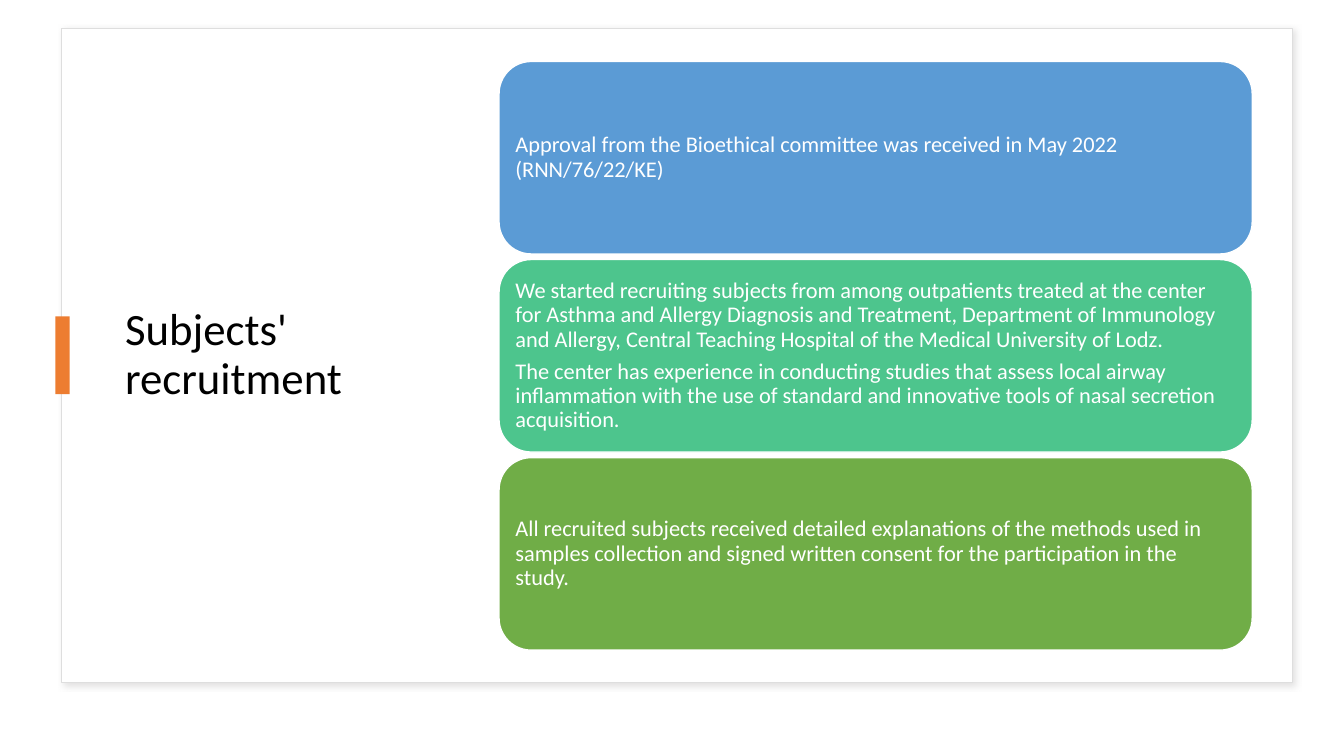
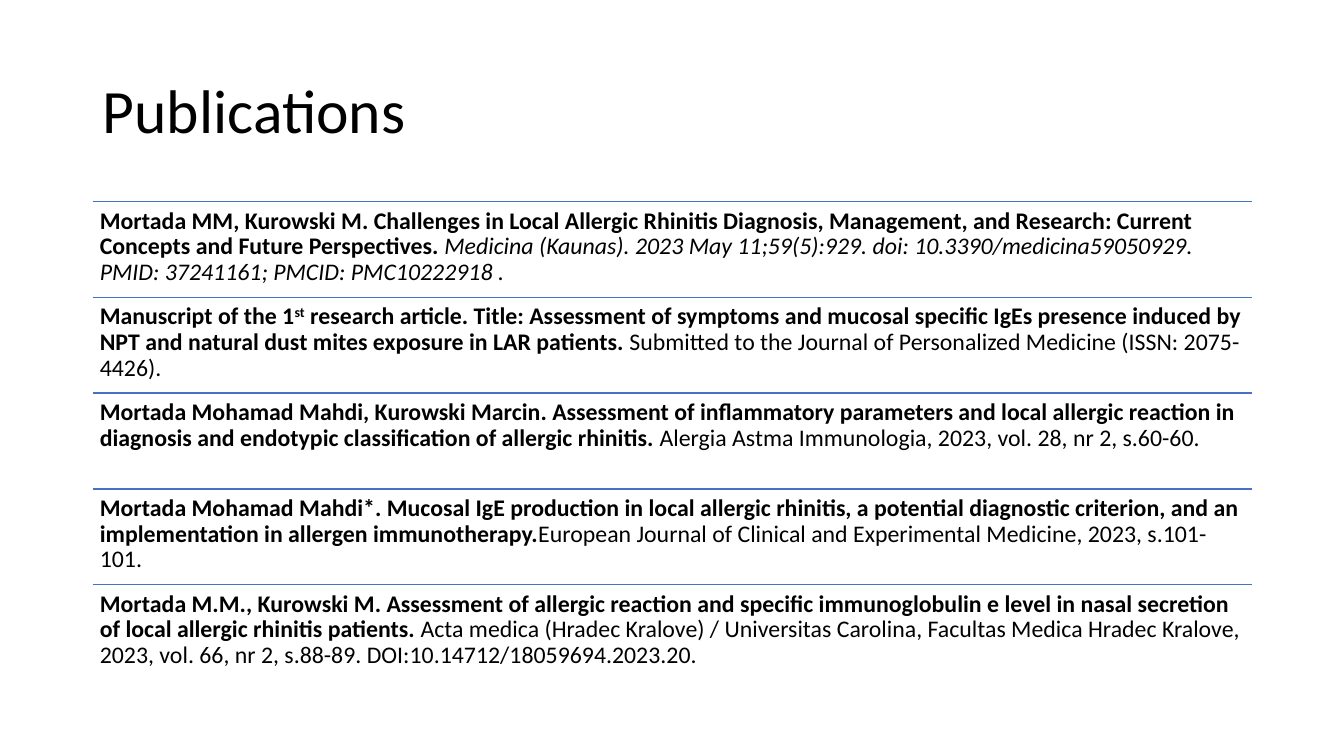
from lxml.etree import SubElement
from pptx import Presentation
from pptx.dml.color import RGBColor
from pptx.enum.shapes import MSO_CONNECTOR, MSO_SHAPE
from pptx.enum.text import MSO_ANCHOR, MSO_AUTO_SIZE, PP_ALIGN
from pptx.oxml.ns import qn
from pptx.util import Inches, Pt

# Shared style
FONT = "Calibri"
BLACK = RGBColor(0x00, 0x00, 0x00)
WHITE = RGBColor(0xFF, 0xFF, 0xFF)
FRAME_GRAY = RGBColor(0xDE, 0xDE, 0xDE)
SHADOW_GRAY = RGBColor(0xC5, 0xC3, 0xC3)
ORANGE = RGBColor(0xED, 0x7D, 0x31)
BLUE = RGBColor(0x5B, 0x9B, 0xD5)
TEAL = RGBColor(0x4D, 0xC5, 0x8D)
GREEN = RGBColor(0x70, 0xAD, 0x47)
RULE_BLUE = RGBColor(0x44, 0x72, 0xC4)
INSET = 0.07
LINE_SPACING = 0.9
PARAGRAPH_GAP = 0.35  # share of the text size

# Content
RECRUITMENT = [
    (BLUE, ["Approval from the Bioethical committee was received in May 2022 (RNN/76/22/KE)"]),
    (TEAL, [
        "We started recruiting subjects from among outpatients treated at the center for Asthma "
        "and Allergy Diagnosis and Treatment, Department of Immunology and Allergy, Central "
        "Teaching Hospital of the Medical University of Lodz.",
        "The center has experience in conducting studies that assess local airway inflammation "
        "with the use of standard and innovative tools of nasal secretion acquisition.",
    ]),
    (GREEN, [
        "All recruited subjects received detailed explanations of the methods used in samples "
        "collection and signed written consent for the participation in the study.",
    ]),
]

# Each publication is a list of (text, style) runs
PUBLICATIONS = [
    [("Mortada MM, Kurowski M. Challenges in Local Allergic Rhinitis Diagnosis, Management, "
      "and Research: Current Concepts and Future Perspectives. ", "bold"),
     ("Medicina (Kaunas). 2023 May 11;59(5):929. doi: 10.3390/medicina59050929. "
      "PMID: 37241161; PMCID: PMC10222918 .", "italic")],
    [("Manuscript of the 1", "bold"),
     ("st", "bold superscript"),
     (" research article. Title: Assessment of symptoms and mucosal specific IgEs presence "
      "induced by NPT and natural dust mites exposure in LAR patients. ", "bold"),
     ("Submitted to the Journal of Personalized Medicine (ISSN: 2075-4426).", "")],
    [("Mortada Mohamad Mahdi, Kurowski Marcin. Assessment of inflammatory parameters and local "
      "allergic reaction in diagnosis and endotypic classification of allergic rhinitis. ", "bold"),
     ("Alergia Astma Immunologia, 2023, vol. 28, nr 2, s.60-60.", "")],
    [("Mortada Mohamad Mahdi*. Mucosal IgE production in local allergic rhinitis, a potential "
      "diagnostic criterion, and an implementation in allergen immunotherapy.", "bold"),
     ("European Journal of Clinical and Experimental Medicine, 2023, s.101-101.", "")],
    [("Mortada M.M., Kurowski M. Assessment of allergic reaction and specific immunoglobulin e "
      "level in nasal secretion of local allergic rhinitis patients. ", "bold"),
     ("Acta medica (Hradec Kralove) / Universitas Carolina, Facultas Medica Hradec Kralove, "
      "2023, vol. 66, nr 2, s.88-89. DOI:10.14712/18059694.2023.20.", "")],
]


def format_run(r, size, color, style=""):
    r.font.name = FONT
    r.font.size = Pt(size)
    r.font.color.rgb = color
    r.font.bold = "bold" in style
    r.font.italic = "italic" in style
    if "superscript" in style:
        r.font._element.set("baseline", "30000")


def format_paragraph(p, size, gap=PARAGRAPH_GAP):
    p.alignment = PP_ALIGN.LEFT
    p.line_spacing = LINE_SPACING
    p.space_before = Pt(0)
    p.space_after = Pt(round(size * gap, 1))


def format_frame(tf, anchor, inset):
    tf.word_wrap = True
    tf.auto_size = MSO_AUTO_SIZE.NONE
    tf.vertical_anchor = anchor
    tf.margin_left = tf.margin_right = tf.margin_top = tf.margin_bottom = Inches(inset)


def add_titled_slide(prs, title, box, size):
    s = prs.slides.add_slide(prs.slide_layouts[5])
    sp = s.shapes.title
    sp.left, sp.top, sp.width, sp.height = map(Inches, box)
    tf = sp.text_frame
    tf.text = title
    format_frame(tf, MSO_ANCHOR.MIDDLE, 0.1)
    format_paragraph(tf.paragraphs[0], size, gap=0)
    format_run(tf.paragraphs[0].runs[0], size, BLACK)
    return s


def add_box(s, kind, box, fill, line=None):
    sp = s.shapes.add_shape(kind, *map(Inches, box))
    sp.shadow.inherit = False
    sp.fill.solid()
    sp.fill.fore_color.rgb = fill
    if line is None:
        sp.line.fill.background()
    else:
        sp.line.color.rgb = line
        sp.line.width = Pt(1)
    return sp


def add_soft_shadow(sp):
    effects = sp._element.spPr.find(qn("a:effectLst"))
    shadow = SubElement(effects, qn("a:outerShdw"), blurRad=str(Pt(4)), dist=str(Pt(3)),
                        dir="2700000", algn="tl", rotWithShape="0")
    color = SubElement(shadow, qn("a:srgbClr"), val=str(SHADOW_GRAY))
    SubElement(color, qn("a:alpha"), val="50000")


def add_card(s, box, fill, paragraphs):
    sp = add_box(s, MSO_SHAPE.ROUNDED_RECTANGLE, box, fill, WHITE)
    tf = sp.text_frame
    tf.text = "\n".join(paragraphs)
    format_frame(tf, MSO_ANCHOR.MIDDLE, INSET)
    for p in tf.paragraphs:
        format_paragraph(p, 16)
        format_run(p.runs[0], 16, WHITE)


def add_rule(s, left, top, width):
    line = s.shapes.add_connector(MSO_CONNECTOR.STRAIGHT, Inches(left), Inches(top),
                                  Inches(left + width), Inches(top))
    line.line.color.rgb = RULE_BLUE
    line.line.width = Pt(1)
    SubElement(line._element.spPr, qn("a:effectLst"))


def add_publication(s, box, runs):
    tf = s.shapes.add_textbox(*map(Inches, box)).text_frame
    format_frame(tf, MSO_ANCHOR.TOP, INSET)
    p = tf.paragraphs[0]
    format_paragraph(p, 17)
    for text, style in runs:
        r = p.add_run()
        r.text = text
        format_run(r, 17, BLACK, style)


def build_recruitment(prs):
    s = add_titled_slide(prs, "Subjects' recruitment", (1.14, 0.55, 3.27, 5.95), 32)
    # Framed panel behind the title, with its accent tab
    panel = add_box(s, MSO_SHAPE.RECTANGLE, (0.61, 0.28, 12.21, 6.49), WHITE, FRAME_GRAY)
    add_soft_shadow(panel)
    s.shapes.title._element.addprevious(panel._element)
    add_box(s, MSO_SHAPE.RECTANGLE, (0.55, 3.14, 0.14, 0.77), ORANGE)
    # Stacked cards
    top, height, gap = 0.61, 1.91, 0.055
    for i, (fill, paragraphs) in enumerate(RECRUITMENT):
        add_card(s, (4.95, top + i * (height + gap), 7.47, height), fill, paragraphs)


def build_publications(prs):
    left, width, top, row = 0.92, 11.5, 2, 0.95
    s = add_titled_slide(prs, "Publications", (left, 0.4, width, 1.45), 44)
    # One rule and one entry per row
    for i, runs in enumerate(PUBLICATIONS):
        y = top + i * row
        add_rule(s, left, y, width)
        add_publication(s, (left, y, width, row), runs)


def main():
    prs = Presentation()
    prs.slide_width, prs.slide_height = Inches(13.33), Inches(7.5)
    build_recruitment(prs)
    build_publications(prs)
    prs.save("out.pptx")


if __name__ == "__main__":
    main()
